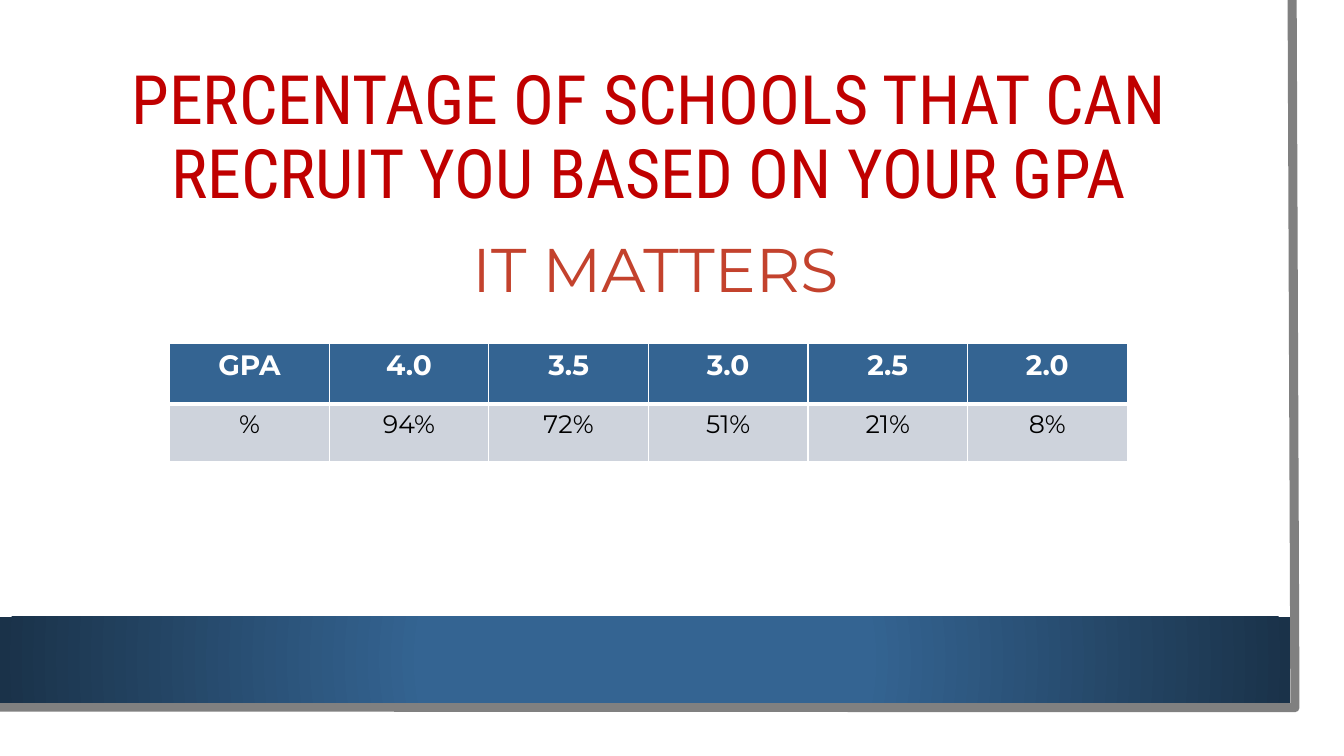
from lxml.etree import SubElement
from pptx import Presentation
from pptx.dml.color import RGBColor
from pptx.enum.shapes import MSO_SHAPE
from pptx.enum.text import MSO_ANCHOR, MSO_AUTO_SIZE, PP_ALIGN
from pptx.oxml import parse_xml
from pptx.oxml.ns import nsdecls, qn
from pptx.util import Pt

BLUE, NAVY, WHITE = "346492", "1A3249", "FFFFFF"
GPA_ROWS = [
    ["GPA", "4.0", "3.5", "3.0", "2.5", "2.0"],
    ["%", "94%", "72%", "51%", "21%", "8%"],
]


def rgb(color):
    return RGBColor.from_string(color)


def write(tf, text, font="Montserrat", size=18, color="000000", bold=False,
          spacing=1.0, anchor=None):
    """Put one centred paragraph in a text frame."""
    tf.word_wrap = True
    if anchor is not None:
        tf.vertical_anchor = anchor
    p = tf.paragraphs[0]
    p.alignment = PP_ALIGN.CENTER
    p.line_spacing = spacing
    r = p.add_run()
    r.text = text
    r.font.name, r.font.size, r.font.bold = font, Pt(size), bold
    r.font.color.rgb = rgb(color)


def add_page_edge(s):
    builder = s.shapes.build_freeform(Pt(923), 0)
    builder.add_line_segments([(Pt(925), Pt(505.5)), (0, Pt(505))], close=False)
    sp = builder.convert_to_shape()
    sp.shadow.inherit = False
    sp.fill.background()
    sp.line.color.rgb = rgb("808080")
    sp.line.width = Pt(6.5)


def add_band(s):
    """Add the bottom band, with a gradient that darkens from its centre."""
    sp = s.shapes.add_shape(MSO_SHAPE.RECTANGLE, 0, Pt(440.6), Pt(921.6), Pt(61.4))
    sp.shadow.inherit = False
    sp.line.fill.background()
    stops = "".join(
        f'<a:gs pos="{pos}000"><a:srgbClr val="{color}"/></a:gs>'
        for pos, color in ((34, BLUE), (100, NAVY)))
    sp._element.spPr.find(qn("a:prstGeom")).addnext(parse_xml(
        f'<a:gradFill {nsdecls("a")} rotWithShape="1"><a:gsLst>{stops}</a:gsLst>'
        '<a:path path="circle"><a:fillToRect l="50000" t="50000" r="50000" '
        'b="50000"/></a:path></a:gradFill>'))


def set_borders(cell, **widths):
    tcPr = cell._tc.get_or_add_tcPr()
    for side in "LRTB":
        ln = SubElement(tcPr, qn(f"a:ln{side}"), w=str(Pt(widths.get(side, 1))))
        fill = SubElement(ln, qn("a:solidFill"))
        SubElement(fill, qn("a:srgbClr"), val=WHITE)


def add_gpa_table(s):
    frame = s.shapes.add_table(len(GPA_ROWS), len(GPA_ROWS[0]),
                               Pt(121.2), Pt(245), Pt(684), Pt(84.5))
    table = frame.table
    styles = [
        (43.7, BLUE, {"B": 3}, dict(size=20, color=WHITE, bold=True)),
        (40.8, "CED3DC", {"T": 3}, dict(size=18)),
    ]
    for i, (height, fill, borders, text_format) in enumerate(styles):
        table.rows[i].height = Pt(height)
        for cell, text in zip(table.rows[i].cells, GPA_ROWS[i]):
            set_borders(cell, **borders)
            cell.fill.solid()
            cell.fill.fore_color.rgb = rgb(fill)
            write(cell.text_frame, text, **text_format)


def main():
    prs = Presentation()
    prs.slide_width, prs.slide_height = Pt(960), Pt(540)
    s = prs.slides.add_slide(prs.slide_layouts[5])
    add_page_edge(s)
    add_band(s)

    title = s.shapes.title
    title.left, title.top, title.width, title.height = Pt(54), Pt(54), Pt(818.6), Pt(91.4)
    title.text_frame.auto_size = MSO_AUTO_SIZE.NONE
    write(title.text_frame, "PERCENTAGE OF SCHOOLS THAT CAN RECRUIT YOU BASED ON YOUR GPA",
          font="Roboto Condensed", size=48.6, color="C00000", spacing=0.9,
          anchor=MSO_ANCHOR.MIDDLE)

    subtitle = s.shapes.add_textbox(Pt(145.4), Pt(168.5), Pt(645.8), Pt(53.3))
    write(subtitle.text_frame, "IT MATTERS", size=44, color="C3422D", spacing=0.9,
          anchor=MSO_ANCHOR.BOTTOM)
    add_gpa_table(s)
    prs.save("out.pptx")


if __name__ == "__main__":
    main()
